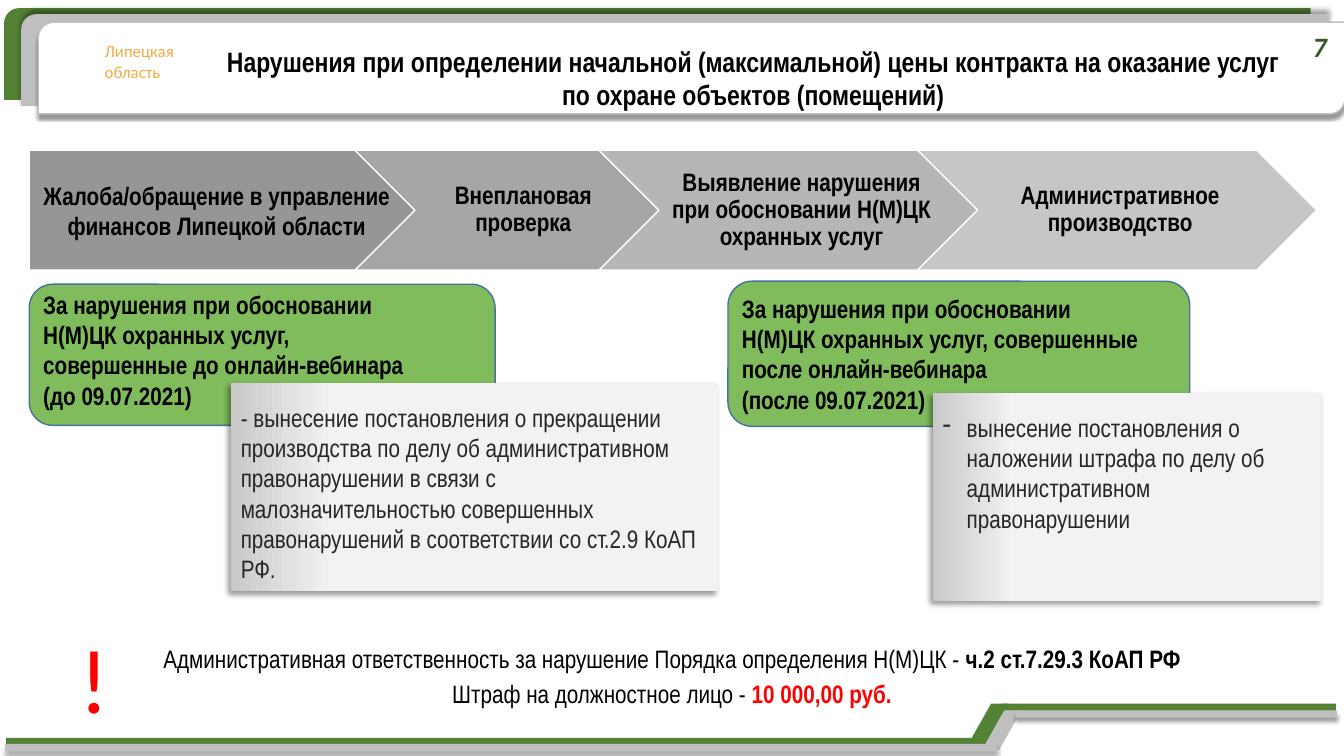
from lxml.etree import SubElement
from pptx import Presentation
from pptx.dml.color import RGBColor
from pptx.enum.shapes import MSO_SHAPE
from pptx.enum.text import MSO_ANCHOR, PP_ALIGN
from pptx.oxml.ns import qn
from pptx.util import Inches, Pt

GREEN, GREY, WHITE, BLACK, RED = "548235", "BFBFBF", "FFFFFF", "000000", "FF0000"
LIME, LIME_EDGE = "81BC5C", "43739E"
NARROW = {"name": "Arial Narrow", "size": Pt(18), "color": BLACK}
BOLD = {**NARROW, "bold": True}
PADDING = (0.1, 0.05, 0.1, 0.05)


def rgb(value):
    return RGBColor.from_string(value)


class SlideBuilder:
    """Holds the current slide and draws styled elements on it."""

    def __init__(self, slide):
        self.slide = slide

    def paint(self, shape, fill, line=None, shadow=None):
        shape.shadow.inherit = False
        if isinstance(fill, str):
            shape.fill.solid()
            shape.fill.fore_color.rgb = rgb(fill)
        else:
            shape.fill.gradient()
            shape.fill.gradient_angle = 0
            for stop, (position, color) in zip(shape.fill.gradient_stops, fill):
                stop.position = position
                stop.color.rgb = rgb(color)
        if line:
            shape.line.color.rgb = rgb(line)
            shape.line.width = Pt(1)
        else:
            shape.line.fill.background()
        if shadow:
            blur, distance, angle = shadow
            effects = shape.element.spPr.find(qn("a:effectLst"))
            outer = SubElement(effects, qn("a:outerShdw"), blurRad=str(Pt(blur)),
                               dist=str(Pt(distance)), dir=str(angle * 60000),
                               algn="ctr", rotWithShape="0")
            tint = SubElement(outer, qn("a:srgbClr"), val=BLACK)
            SubElement(tint, qn("a:alpha"), val="40000")
        return shape

    def shape(self, kind, place, fill, line=None, shadow=None):
        drawn = self.slide.shapes.add_shape(kind, *map(Inches, place))
        return self.paint(drawn, fill, line, shadow)

    def outline(self, points, fill):
        corners = [(Inches(x), Inches(y)) for x, y in points]
        builder = self.slide.shapes.build_freeform(*corners[0], scale=1.0)
        builder.add_line_segments(corners[1:], close=True)
        return self.paint(builder.convert_to_shape(), fill)

    def set_text(self, holder, lines, style, insets=PADDING, anchor=MSO_ANCHOR.TOP,
                 align=PP_ALIGN.LEFT, spacing=1.0, bullet=None):
        frame = holder.text_frame
        sides = ("margin_left", "margin_top", "margin_right", "margin_bottom")
        settings = dict(zip(sides, map(Inches, insets)))
        settings.update(word_wrap=True, vertical_anchor=anchor)
        for key, value in settings.items():
            setattr(frame, key, value)
        for index, line in enumerate(lines):
            paragraph = frame.add_paragraph() if index else frame.paragraphs[0]
            paragraph.alignment = align
            paragraph.line_spacing = spacing
            if bullet:
                properties = paragraph._p.get_or_add_pPr()
                properties.set("marL", str(Inches(0.24)))
                properties.set("indent", str(-Inches(0.24)))
                SubElement(properties, qn("a:buChar"), char=bullet)
            for words, changes in ([(line, {})] if isinstance(line, str) else line):
                run = paragraph.add_run()
                run.text = words
                for key, value in {**style, **changes}.items():
                    if key == "color":
                        run.font.color.rgb = rgb(value)
                    else:
                        setattr(run.font, key, value)

    def text(self, place, lines, style, **layout):
        box = self.slide.shapes.add_textbox(*map(Inches, place))
        self.set_text(box, lines, style, **layout)

    def title(self, place, words, style):
        heading = self.slide.shapes.title
        heading.element.getparent().append(heading.element)
        sides = ("left", "top", "width", "height")
        for key, value in zip(sides, map(Inches, place)):
            setattr(heading, key, value)
        self.set_text(heading, [words], style, align=PP_ALIGN.CENTER)

    def band(self, color, slant, low_bar, high_bar, shadow=None):
        left, top = slant
        self.outline([(left, top + 0.39), (left + 0.22, top),
                      (left + 0.39, top), (left + 0.17, top + 0.39)], color)
        for x, y, width in (low_bar, high_bar):
            self.shape(MSO_SHAPE.RECTANGLE, (x, y, width, 0.07), color, shadow=shadow)

    def card(self, place, words, bullet=None):
        panel = self.shape(MSO_SHAPE.RECTANGLE, place, [(0, "C9C9C9"), (0.21, "F2F2F2")],
                           shadow=(4, 3, 135))
        self.set_text(panel, [words], {**NARROW, "color": "262626"},
                      insets=(0.1, 0.19, 0.1, 0.05), bullet=bullet)


def main():
    deck = Presentation()
    deck.slide_width, deck.slide_height = Inches(13.33), Inches(7.5)
    page = SlideBuilder(deck.slides.add_slide(deck.slide_layouts[5]))
    centered = {"align": PP_ALIGN.CENTER, "anchor": MSO_ANCHOR.MIDDLE}

    header_layers = [
        (0.04, 0.08, GREEN, None, None),
        (0.21, 0.14, GREY, None, (4, 3, 270)),
        (0.38, 0.22, WHITE, GREY, (2, 3, 90)),
    ]
    for x, y, fill, line, shadow in header_layers:
        page.shape(MSO_SHAPE.ROUND_2_DIAG_RECTANGLE, (x, y, 12.96, 0.91), fill, line, shadow)
    page.text((0.94, 0.36, 0.91, 0.5), ["Липецкая", "область"],
              {"name": "Calibri", "size": Pt(12), "color": "F2AC44"})
    page.band(GREEN, (9.61, 6.98), (0.06, 7.32, 9.72), (9.94, 6.98, 3.31))
    page.band(GREY, (9.74, 7.05), (0.05, 7.38, 9.84), (10.07, 7.05, 3.19), (3, 3, 90))
    page.title((2.02, 0.39, 10.9, 0.77),
               "Нарушения при определении начальной (максимальной) цены контракта "
               "на оказание услуг по охране объектов (помещений)",
               {**BOLD, "size": Pt(20)})
    page.text((12.95, 0.27, 0.28, 0.37), ["7"],
              {"name": "Calibri", "size": Pt(20), "color": "385723",
               "bold": True, "italic": True}, insets=(0, 0, 0, 0), **centered)

    steps = [
        (MSO_SHAPE.PENTAGON, 0.29, 3.96, "969696", 0.29, 3.67, 1.0,
         "Жалоба/обращение в управление финансов Липецкой области"),
        (MSO_SHAPE.CHEVRON, 3.52, 3.29, "A6A6A6", 4.12, 2.09, 0.9,
         "Внеплановая проверка"),
        (MSO_SHAPE.CHEVRON, 5.94, 3.96, "B6B6B6", 6.54, 2.77, 0.9,
         "Выявление нарушения при обосновании Н(М)ЦК охранных услуг"),
        (MSO_SHAPE.CHEVRON, 9.1, 3.96, "C6C6C6", 9.7, 2.77, 0.9,
         "Административное производство"),
    ]
    for kind, x, width, fill, label_x, label_width, spacing, label in steps:
        page.shape(kind, (x, 1.49, width, 1.19), fill, WHITE)
        page.text((label_x, 1.49, label_width, 1.19), [label], BOLD,
                  insets=(0.08, 0.05, 0.03, 0.05), spacing=spacing, **centered)

    periods = [
        ((0.29, 2.82, 4.62, 1.4), (0.33, 2.82, 4.08, 1.31), "до",
         (2.29, 3.8, 4.83, 2.06), None,
         "- вынесение постановления о прекращении производства по делу об "
         "административном правонарушении в связи с малозначительностью совершенных "
         "правонарушений в соответствии со ст.2.9 КоАП РФ."),
        ((7.22, 2.79, 4.58, 1.44), (7.26, 2.86, 4.19, 1.31), "после",
         (9.25, 3.9, 3.86, 2.06), "-",
         "вынесение постановления о наложении штрафа по делу об "
         "административном правонарушении"),
    ]
    for plate, caption, when, card, bullet, outcome in periods:
        page.shape(MSO_SHAPE.ROUNDED_RECTANGLE, plate, LIME, LIME_EDGE)
        page.text(caption, ["За нарушения при обосновании Н(М)ЦК охранных услуг, "
                            f"совершенные {when} онлайн-вебинара",
                            f"({when} 09.07.2021)"], BOLD)
        page.card(card, outcome, bullet)

    liability = [
        [("Административная ответственность за нарушение Порядка определения Н(М)ЦК - ", {}),
         ("ч.2 ст.7.29.3 КоАП РФ", {"bold": True})],
        [("Штраф на должностное лицо - ", {}),
         ("10 000,00 руб.", {"bold": True, "color": RED})],
    ]
    page.text((0, 6.3, 13.33, 0.77), liability, NARROW, spacing=1.15, **centered)
    page.text((0.59, 6.13, 0.7, 1.19), ["!"],
              {"name": "Calibri", "size": Pt(65), "color": RED}, align=PP_ALIGN.CENTER)
    deck.save("out.pptx")


if __name__ == "__main__":
    main()
